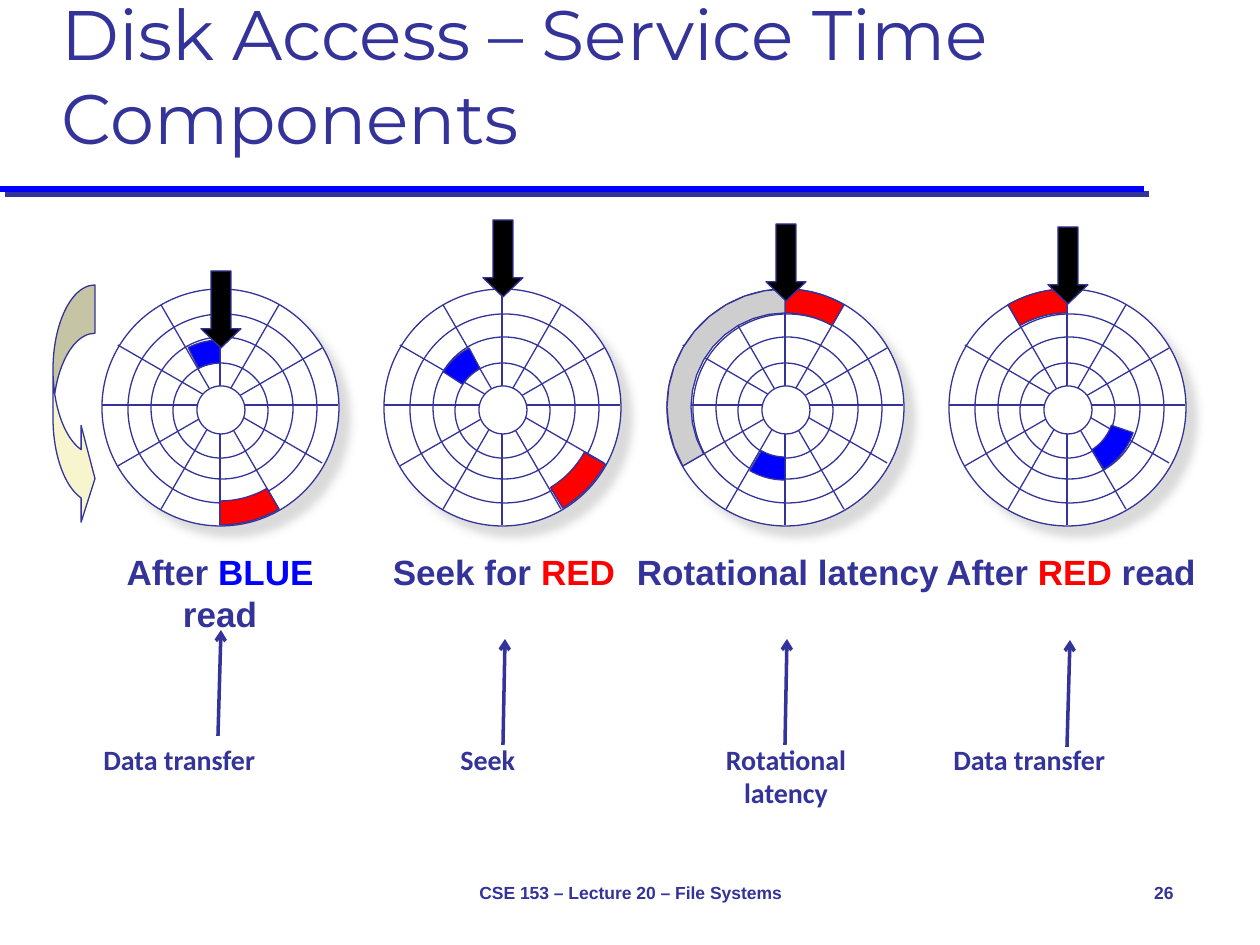
from math import cos, radians, sin

from lxml import etree
from pptx import Presentation
from pptx import util as u
from pptx.dml.color import RGBColor
from pptx.enum import shapes, text
from pptx.oxml.ns import qn

PX = 914400 / 126
NAVY, BLUE, RED, GREY, WHITE, BLACK = "333399", "0000FF", "FF0000", "CECECE", "FFFFFF", "000000"
LEFT, CENTER, RIGHT = text.PP_ALIGN.LEFT, text.PP_ALIGN.CENTER, text.PP_ALIGN.RIGHT

TITLE = "Disk Access – Service Time Components"
FOOTERS = [
    ("CSE 153 – Lecture 20 – File Systems", (431, 861, 399, 63), CENTER),
    ("26", (1102, 861, 84, 63), RIGHT),
]

# Sectors: band, colour, start and end in degrees clockwise from the top
DISKS = [
    {"left": 102, "head_top": 271,
     "sectors": [("inner", BLUE, -27, 0), ("outer", RED, 150, 180)],
     "caption": [("After ", NAVY), ("BLUE ", BLUE), ("read", NAVY)],
     "caption_box": (73, 544, 294, 54),
     "label": ["Data transfer"], "label_box": (91, 736, 256, 63), "label_align": LEFT,
     "pointer": (218, 736, 221, 630)},
    {"left": 384, "head_top": 220,
     "sectors": [("outer", RED, 119, 149), ("inner", BLUE, -57, -28)],
     "caption": [("Seek for ", NAVY), ("RED", RED)],
     "caption_box": (378, 544, 252, 54),
     "label": ["Seek"], "label_box": (448, 736, 108, 63), "label_align": LEFT,
     "pointer": (503, 745, 505, 639)},
    {"left": 667, "head_top": 224,
     "sectors": [("outer", RED, 0, 30), ("inner", BLUE, 180, 210), ("outer", GREY, 240, 360)],
     "caption": [("Rotational latency", NAVY)],
     "caption_box": (620, 544, 336, 54),
     "label": ["Rotational", "latency"], "label_box": (672, 736, 228, 115), "label_align": CENTER,
     "pointer": (785, 745, 787, 639)},
    {"left": 949, "head_top": 227,
     "sectors": [("outer", RED, -30, 0), ("inner", BLUE, 109, 148)],
     "caption": [("After ", NAVY), ("RED", RED), (" read", NAVY)],
     "caption_box": (924, 544, 294, 54),
     "label": ["Data transfer"], "label_box": (941, 736, 256, 63), "label_align": LEFT,
     "pointer": (1067, 747, 1070, 640)},
]
DISK_TOP = 289
RINGS = [(0, 0, 237), (26, 25, 189), (49, 48, 142), (71, 74, 95)]  # dx, dy, diameter
HUB = (95, 97, 48)
RADIUS = 118
SPOKES = [(0, 0), (30, 0), (60, 0), (90, -2), (120, -3), (150, 0)]  # degrees, dy
BANDS = {"outer": (118, 118, 94), "inner": (121, 70, 47)}  # centre y, outer and inner radius


def emu(*lengths):
    return [u.Emu(round(length * PX)) for length in lengths]


def rgb(value):
    return RGBColor.from_string(value)


def add_effects(shape, shadow=None):
    """Replace the theme's effects; shadow is colour, opacity %, blur pt, distance pt."""
    properties = shape._element.spPr
    for old in properties.findall(qn("a:effectLst")):
        properties.remove(old)
    effects = etree.SubElement(properties, qn("a:effectLst"))
    if shadow:
        colour, opacity, blur, distance = shadow
        outer = etree.SubElement(effects, qn("a:outerShdw"), blurRad=str(round(blur * 12700)),
                                 dist=str(round(distance * 12700)), dir="2700000")
        tint = etree.SubElement(outer, qn("a:srgbClr"), val=colour)
        etree.SubElement(tint, qn("a:alpha"), val=str(opacity * 1000))


def paint(shape, fill, shadow=None):
    shape.fill.solid()
    shape.fill.fore_color.rgb = rgb(fill)
    shape.line.color.rgb = rgb(NAVY)
    shape.line.width = u.Pt(0.75)
    add_effects(shape, shadow)


def add_preset(parent, kind, box, fill, adjustments=(), shadow=None):
    shape = parent.add_shape(kind, *emu(*box))
    for index, value in enumerate(adjustments):
        shape.adjustments[index] = value
    paint(shape, fill, shadow)


def add_line(parent, ends, colour=NAVY, width=0.75, arrow=False, shadow=None):
    line = parent.add_connector(shapes.MSO_CONNECTOR.STRAIGHT, *emu(*ends))
    line.line.color.rgb = rgb(colour)
    line.line.width = u.Pt(width)
    if arrow:
        etree.SubElement(line.line._get_or_add_ln(), qn("a:tailEnd"), type="arrow")
    add_effects(line, shadow)


def set_font(run, name, size, colour, bold):
    formats = {"name": name, "size": u.Pt(size), "bold": bold}
    for key, value in formats.items():
        setattr(run.font, key, value)
    run.font.color.rgb = rgb(colour)


def add_text(slide, box, paragraphs, font, size, align, anchor=text.MSO_ANCHOR.TOP):
    """Each paragraph is a list of (text, colour) runs."""
    frame = slide.shapes.add_textbox(*emu(*box)).text_frame
    frame.word_wrap = True
    frame.vertical_anchor = anchor
    for index, runs in enumerate(paragraphs):
        paragraph = frame.add_paragraph() if index else frame.paragraphs[0]
        paragraph.alignment = align
        for words, colour in runs:
            run = paragraph.add_run()
            run.text = words
            set_font(run, font, size, colour, True)


def polar(centre_x, centre_y, radius, degrees):
    angle = radians(degrees)
    return centre_x + radius * sin(angle), centre_y - radius * cos(angle)


def add_sector(parent, left, band, colour, start, end):
    centre_y, outer, inner = BANDS[band]
    steps = 12
    angles = [start + (end - start) * step / steps for step in range(steps + 1)]
    arcs = [(outer, angle) for angle in angles] + [(inner, angle) for angle in reversed(angles)]
    points = [emu(*polar(left + RADIUS, DISK_TOP + centre_y, *arc)) for arc in arcs]
    builder = parent.build_freeform(*points[0], scale=1.0)
    builder.add_line_segments(points[1:], close=True)
    paint(builder.convert_to_shape(), colour)


def add_disk(slide, disk):
    parent = slide.shapes.add_group_shape().shapes
    left = disk["left"]

    def add_circle(dx, dy, size, shadow=None):
        add_preset(parent, shapes.MSO_SHAPE.OVAL, (left + dx, DISK_TOP + dy, size, size),
                   WHITE, shadow=shadow)

    for index, ring in enumerate(RINGS):
        add_circle(*ring, shadow=None if index else (GREY, 75, 5, 8.5))
    for degrees, dy in SPOKES:
        centre = left + RADIUS, DISK_TOP + RADIUS + dy
        add_line(parent, polar(*centre, RADIUS, degrees) + polar(*centre, RADIUS, degrees + 180))
    add_circle(*HUB)
    for sector in disk["sectors"]:
        add_sector(parent, left, *sector)
    add_preset(parent, shapes.MSO_SHAPE.DOWN_ARROW, (left + 99, disk["head_top"], 40, 77),
               BLACK, (0.5, 0.48))


def add_title(slide):
    title = slide.shapes.title
    title.left, title.top, title.width, title.height = emu(49, 60, 1115, 105)
    frame = title.text_frame
    frame.text = TITLE
    formats = {"vertical_anchor": text.MSO_ANCHOR.BOTTOM, "word_wrap": True,
               "auto_size": text.MSO_AUTO_SIZE.NONE}
    for key, value in formats.items():
        setattr(frame, key, value)
    frame.paragraphs[0].alignment = LEFT
    set_font(frame.paragraphs[0].runs[0], "Montserrat", 40, NAVY, False)


def main():
    presentation = Presentation()
    presentation.slide_width, presentation.slide_height = emu(1260, 945)
    slide = presentation.slides.add_slide(presentation.slide_layouts[5])
    add_line(slide.shapes, (0, 189, 1144, 189), BLUE, 3.5, shadow=(NAVY, 100, 0, 4.2))
    add_title(slide)
    for disk in DISKS:
        add_disk(slide, disk)
        add_text(slide, disk["caption_box"], [disk["caption"]], "Arial", 20, CENTER)
        label = [[(words, NAVY)] for words in disk["label"]]
        add_text(slide, disk["label_box"], label, "Calibri", 16, disk["label_align"])
        add_line(slide.shapes, disk["pointer"], width=2, arrow=True)
    add_preset(slide.shapes, shapes.MSO_SHAPE.CURVED_RIGHT_ARROW, (53, 285, 42, 242),
               "F7F5CD", (1.15, 2.3, 0.33))
    for words, box, align in FOOTERS:
        add_text(slide, box, [[(words, NAVY)]], "Arial", 10, align, text.MSO_ANCHOR.MIDDLE)
    presentation.save("out.pptx")


if __name__ == "__main__":
    main()
